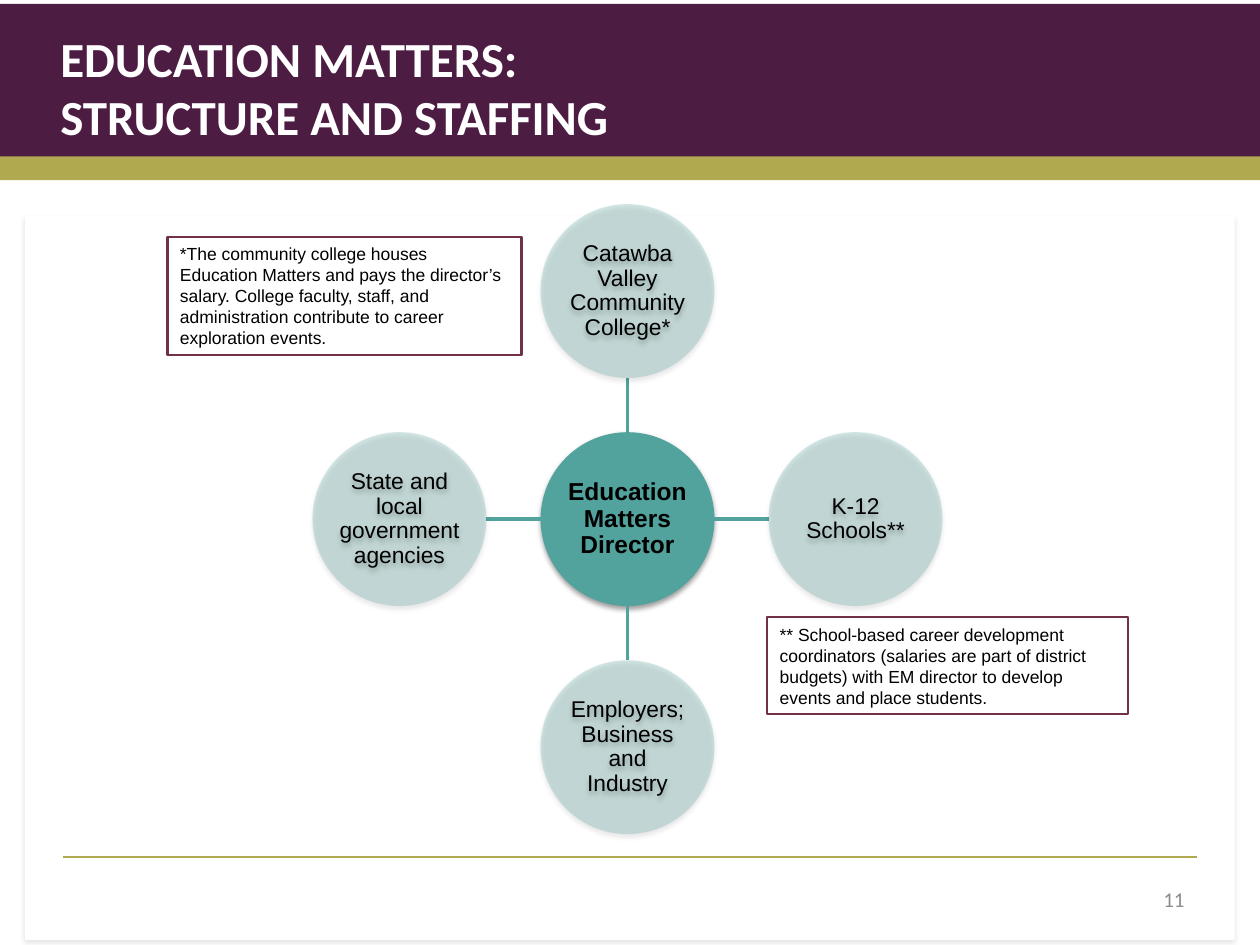
from dataclasses import dataclass

from lxml import etree
from pptx import Presentation
from pptx.dml.color import RGBColor
from pptx.enum.shapes import MSO_CONNECTOR, MSO_SHAPE
from pptx.enum.text import MSO_ANCHOR, PP_ALIGN
from pptx.oxml.ns import qn
from pptx.util import Inches, Pt

RECT, OVAL, STRAIGHT = MSO_SHAPE.RECTANGLE, MSO_SHAPE.OVAL, MSO_CONNECTOR.STRAIGHT
TOP, MIDDLE = MSO_ANCHOR.TOP, MSO_ANCHOR.MIDDLE
LEFT, CENTER, RIGHT = PP_ALIGN.LEFT, PP_ALIGN.CENTER, PP_ALIGN.RIGHT


@dataclass(frozen=True)
class Theme:
    plum: str = "4D1C43"
    olive: str = "B0A94F"
    teal: str = "52A29D"
    wine: str = "723147"
    white: str = "FFFFFF"
    black: str = "000000"
    gray: str = "8C8C8C"
    head_font: str = "Calibri"
    body_font: str = "Arial"
    title_size: float = 28
    hub_size: float = 14
    node_size: float = 13
    number_size: float = 12
    note_size: float = 10


@dataclass(frozen=True)
class Box:
    x: float
    y: float
    w: float
    h: float

    def emu(self) -> list:
        return [Inches(v) for v in (self.x, self.y, self.w, self.h)]


@dataclass(frozen=True)
class Node:
    text: str
    col: int  # steps from the hub, to the right
    row: int  # steps from the hub, downwards


@dataclass(frozen=True)
class Note:
    text: str
    box: Box


T = Theme()
W, H = 10, 7.5
HUB_X, HUB_Y = 4.98, 4.12
STEP, DIAMETER = 1.81, 1.38

NODES = [
    Node("Catawba Valley Community College*", 0, -1),
    Node("K-12 Schools**", 1, 0),
    Node("Employers; Business and Industry", 0, 1),
    Node("State and local government agencies", -1, 0),
]
NOTES = [
    Note("*The community college houses Education Matters and pays the director’s "
         "salary. College faculty, staff, and administration contribute to career "
         "exploration events.", Box(1.33, 1.88, 2.81, 0.94)),
    Note("** School-based career development coordinators (salaries are part of "
         "district budgets) with EM director to develop events and place students.",
         Box(6.09, 4.9, 2.86, 0.77)),
]


def rgb(color: str) -> RGBColor:
    return RGBColor.from_string(color)


def add_shadow(sp, alpha: int, dist: float, blur: float = 3.1) -> None:
    effects = sp._element.spPr.find(qn("a:effectLst"))
    outer = etree.SubElement(effects, qn("a:outerShdw"), blurRad=str(Pt(blur)),
                             dist=str(Pt(dist)), dir="5400000", rotWithShape="0")
    color = etree.SubElement(outer, qn("a:srgbClr"), val=T.black)
    etree.SubElement(color, qn("a:alpha"), val=str(alpha * 1000))


def add_block(slide, kind, box: Box, fill: str, line: str = "", alpha: int = 100):
    sp = slide.shapes.add_shape(kind, *box.emu())
    sp.shadow.inherit = False
    sp.fill.solid()
    sp.fill.fore_color.rgb = rgb(fill)
    if alpha < 100:
        color = sp._element.spPr.find(qn("a:solidFill"))[0]
        etree.SubElement(color, qn("a:alpha"), val=str(alpha * 1000))
    if line:
        sp.line.color.rgb = rgb(line)
        sp.line.width = Pt(1.25)
    else:
        sp.line.fill.background()
    return sp


def add_line(slide, x1: float, y1: float, x2: float, y2: float,
             color: str, width: float) -> None:
    cn = slide.shapes.add_connector(STRAIGHT, *map(Inches, (x1, y1, x2, y2)))
    cn.line.color.rgb = rgb(color)
    cn.line.width = Pt(width)
    etree.SubElement(cn._element.spPr, qn("a:effectLst"))


def write(sp, text: str, font: str, size: float, color: str, bold: bool = False,
          align=LEFT, anchor=TOP, **frame: int) -> None:
    tf = sp.text_frame
    for name, value in {"word_wrap": True, "vertical_anchor": anchor, **frame}.items():
        setattr(tf, name, value)
    p = tf.paragraphs[0]
    p.alignment = align
    if align == CENTER:
        p.line_spacing = 0.9
    for i, part in enumerate(text.split("\n")):
        if i:
            p.add_line_break()
        r = p.add_run()
        r.text = part
        for name, value in {"name": font, "size": Pt(size), "bold": bold}.items():
            setattr(r.font, name, value)
        r.font.color.rgb = rgb(color)


def add_circle(slide, text: str, x: float, y: float, size: float,
               alpha: int = 100, bold: bool = False) -> None:
    box = Box(x - DIAMETER / 2, y - DIAMETER / 2, DIAMETER, DIAMETER)
    sp = add_block(slide, OVAL, box, T.teal, alpha=alpha)
    add_shadow(sp, 38, 1.6)
    margins = {f"margin_{side}": Inches(0.01)
               for side in ("left", "top", "right", "bottom")}
    write(sp, text, T.body_font, size, T.black, bold, CENTER, MIDDLE, **margins)


def add_node(slide, node: Node) -> None:
    near, far = DIAMETER / 2, STEP - DIAMETER / 2
    add_line(slide, HUB_X + node.col * near, HUB_Y + node.row * near,
             HUB_X + node.col * far, HUB_Y + node.row * far, T.teal, 2)
    add_circle(slide, node.text, HUB_X + node.col * STEP, HUB_Y + node.row * STEP,
               T.node_size, alpha=25)


def main() -> None:
    prs = Presentation()
    prs.slide_width, prs.slide_height = Inches(W), Inches(H)
    slide = prs.slides.add_slide(prs.slide_layouts[6])

    # Header bands, content panel and footer rule
    add_block(slide, RECT, Box(0, 0.03, W, 1.25), T.plum)
    add_block(slide, RECT, Box(0, 1.24, W, 0.19), T.olive)
    panel = add_block(slide, RECT, Box(0.02 * W, 1.71, 0.96 * W, 5.75), T.white)
    add_shadow(panel, 10, 1.8)
    add_line(slide, 0.05 * W, 6.8, 0.95 * W, 6.8, T.olive, 1)

    # Title and page number
    title = slide.shapes.add_textbox(*Box(0.38, 0.18, 6.71, 1.02).emu())
    write(title, "EDUCATION MATTERS:\nSTRUCTURE AND STAFFING", T.head_font,
          T.title_size, T.white, bold=True, anchor=MIDDLE)
    number = slide.shapes.add_textbox(*Box(7.17, 6.94, 2.33, 0.4).emu())
    write(number, "11", T.head_font, T.number_size, T.gray, align=RIGHT, anchor=MIDDLE)

    # Hub and its partners
    add_circle(slide, "Education Matters Director", HUB_X, HUB_Y, T.hub_size, bold=True)
    for node in NODES:
        add_node(slide, node)

    # Footnotes
    for note in NOTES:
        sp = add_block(slide, RECT, note.box, T.white, T.wine)
        write(sp, note.text, T.body_font, T.note_size, T.black)

    prs.save("out.pptx")


if __name__ == "__main__":
    main()
